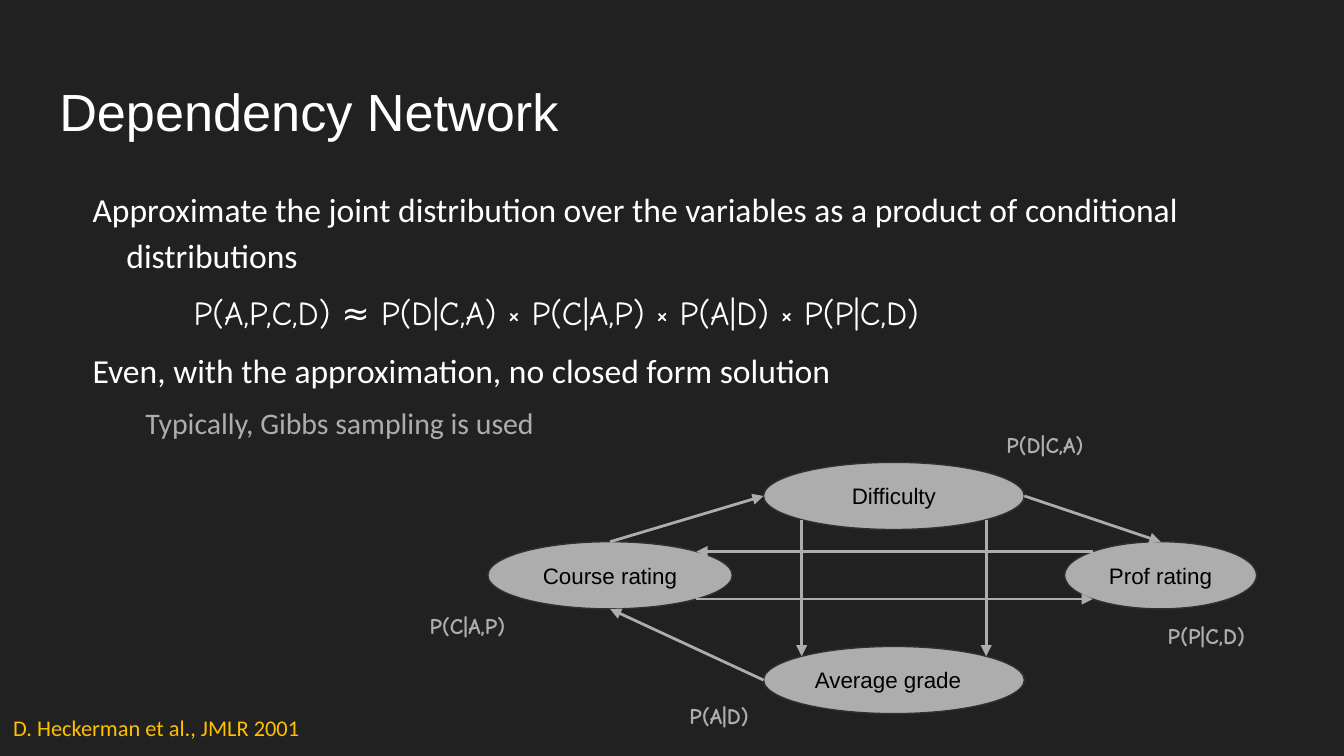
"""Build the slide that explains dependency networks."""
import math

import lxml.etree
import pptx
import pptx.dml.color
import pptx.enum.shapes
import pptx.enum.text
import pptx.oxml.ns
import pptx.util
from pptx.util import Cm, Pt

COLORS = {
    "background": "212121",
    "text": "FFFFFF",
    "muted": "ADADAD",
    "outline": "303030",
    "node_text": "000000",
    "citation": "FFC000",
}
ALIGN = pptx.enum.text.PP_ALIGN
NODE_HEIGHT = 1.27
NODES = {
    "Difficulty": (14.43, 8.74, 4.93, ALIGN.CENTER),
    "Average grade": (14.43, 12.22, 4.93, ALIGN.LEFT),
    "Prof rating": (20.12, 10.24, 3.63, ALIGN.CENTER),
    "Course rating": (9.22, 10.24, 4.62, ALIGN.CENTER),
}
SITES = ("top", "top left", "left", "bottom left",
         "bottom", "bottom right", "right", "top right")
ARROWS = (
    ("Average grade", "left", "Course rating", "bottom"),
    ("Course rating", "top", "Difficulty", "left"),
    ("Difficulty", "bottom left", "Average grade", "top left"),
    ("Difficulty", "bottom right", "Average grade", "top right"),
    ("Difficulty", "right", "Prof rating", "top"),
    ("Prof rating", "top left", "Course rating", "top right"),
    ("Course rating", "bottom right", "Prof rating", "bottom left"),
)
PROBABILITIES = (
    ("P(D|C,A)", 18.77, 7.9),
    ("P(C|A,P)", 7.87, 11.33),
    ("P(P|C,D)", 21.82, 11.51),
    ("P(A|D)", 12.78, 13.03),
)
BODY = (
    ("Approximate the joint distribution over the variables as a product of "
     "conditional distributions", "Calibri", 18, "text", 0, 1.27, -0.64, 6),
    ("P(A,P,C,D) ≈ P(D|C,A) × P(C|A,P) × P(A|D) × P(P|C,D)",
     "Comic Neue", 18, "text", 0, 2.54, 0, 6),
    ("Even, with the approximation, no closed form solution",
     "Calibri", 18, "text", 0, 1.27, -0.64, 6),
    ("Typically, Gibbs sampling is used",
     "Calibri", 16, "muted", 1, 2.54, -0.91, 5),
)


def rgb(name):
    """Return the named colour."""
    return pptx.dml.color.RGBColor.from_string(COLORS[name])


def add_run(paragraph, text, font, size, color, bold=False):
    """Add one formatted run to a paragraph."""
    run = paragraph.add_run()
    run.text = text
    run.font.name = font
    run.font.size = Pt(size)
    run.font.bold = bold
    run.font.color.rgb = rgb(color)


def format_frame(shape, anchor=pptx.enum.text.MSO_ANCHOR.TOP):
    """Set wrapping, anchor and margins, and return the text frame."""
    frame = shape.text_frame
    frame.word_wrap = True
    frame.auto_size = pptx.enum.text.MSO_AUTO_SIZE.NONE
    frame.vertical_anchor = anchor
    frame.margin_left = frame.margin_right = Cm(0.25)
    frame.margin_top = frame.margin_bottom = Cm(0.25)
    return frame


def add_text_frame(slide, left, top, width, height):
    """Add a text box and return its text frame."""
    box = slide.shapes.add_textbox(Cm(left), Cm(top), Cm(width), Cm(height))
    return format_frame(box)


def add_title(slide, text):
    """Place and fill the title placeholder."""
    title = slide.shapes.title
    title.left, title.top = Cm(0.87), Cm(1.24)
    title.width, title.height = Cm(23.67), Cm(1.6)
    paragraph = format_frame(title).paragraphs[0]
    paragraph.alignment = ALIGN.LEFT
    add_run(paragraph, text, "Arial", 28, "text")


def add_body(slide):
    """Add the explanation with its indented paragraphs."""
    frame = add_text_frame(slide, 0.87, 3.2, 23.67, 6.15)
    for index, (text, font, size, color, level, margin, indent, before) in enumerate(BODY):
        paragraph = frame.add_paragraph() if index else frame.paragraphs[0]
        paragraph.level = level
        paragraph.line_spacing = 1.15
        paragraph.space_before = Pt(before)
        properties = paragraph._p.get_or_add_pPr()
        properties.set("marL", str(Cm(margin)))
        properties.set("indent", str(Cm(indent)))
        add_run(paragraph, text, font, size, color)


def add_citation(slide, text):
    """Add the source reference at the bottom left."""
    paragraph = add_text_frame(slide, 0, 13.18, 6, 1.09).paragraphs[0]
    paragraph.line_spacing = 1.15
    add_run(paragraph, text, "Calibri", 12, "citation")


def add_node(slide, text, left, top, width, alignment):
    """Add one variable of the network as an ellipse."""
    node = slide.shapes.add_shape(
        pptx.enum.shapes.MSO_SHAPE.FLOWCHART_CONNECTOR,
        Cm(left), Cm(top), Cm(width), Cm(NODE_HEIGHT))
    node.shadow.inherit = False
    node.fill.solid()
    node.fill.fore_color.rgb = rgb("muted")
    node.line.color.rgb = rgb("outline")
    node.line.width = Pt(0.75)
    frame = format_frame(node, pptx.enum.text.MSO_ANCHOR.MIDDLE)
    frame.paragraphs[0].alignment = alignment
    add_run(frame.paragraphs[0], text, "Arial", 12, "node_text")
    return node


def site_point(node, site):
    """Return the position of a connection site on an ellipse."""
    angle = math.radians(45 * SITES.index(site))
    x = node.left + node.width / 2 * (1 - math.sin(angle))
    y = node.top + node.height / 2 * (1 - math.cos(angle))
    return round(x), round(y)


def add_element(parent, tag, **attributes):
    """Append an XML element in the drawing namespace."""
    lxml.etree.SubElement(parent, pptx.oxml.ns.qn(tag), attributes)


def add_arrow(slide, start, start_site, end, end_site):
    """Add an arrow joined to connection sites of two nodes."""
    arrow = slide.shapes.add_connector(
        pptx.enum.shapes.MSO_CONNECTOR.STRAIGHT,
        *site_point(start, start_site), *site_point(end, end_site))
    arrow.line.color.rgb = rgb("muted")
    arrow.line.width = Pt(1.5)
    joints = arrow.element.xpath(".//p:cNvCxnSpPr")[0]
    for tag, node, site in (("a:stCxn", start, start_site), ("a:endCxn", end, end_site)):
        add_element(joints, tag, id=str(node.shape_id), idx=str(SITES.index(site)))
    add_element(arrow.element.xpath(".//a:ln")[0], "a:tailEnd", type="triangle")
    add_element(arrow.element.xpath("./p:spPr")[0], "a:effectLst")


def add_network(slide):
    """Add the nodes, arrows and probability labels."""
    nodes = {text: add_node(slide, text, *place) for text, place in NODES.items()}
    for start, start_site, end, end_site in ARROWS:
        add_arrow(slide, nodes[start], start_site, nodes[end], end_site)
    for text, left, top in PROBABILITIES:
        frame = add_text_frame(slide, left, top, 2.92, 1.09)
        add_run(frame.paragraphs[0], text, "Comic Neue", 12, "muted", bold=True)


def main():
    """Build and save the presentation."""
    presentation = pptx.Presentation()
    presentation.slide_width, presentation.slide_height = Cm(25.4), Cm(14.29)
    slide = presentation.slides.add_slide(presentation.slide_layouts[5])
    slide.background.fill.solid()
    slide.background.fill.fore_color.rgb = rgb("background")
    add_title(slide, "Dependency Network")
    add_body(slide)
    add_citation(slide, "D. Heckerman et al., JMLR 2001")
    add_network(slide)
    presentation.save("out.pptx")


if __name__ == "__main__":
    main()
